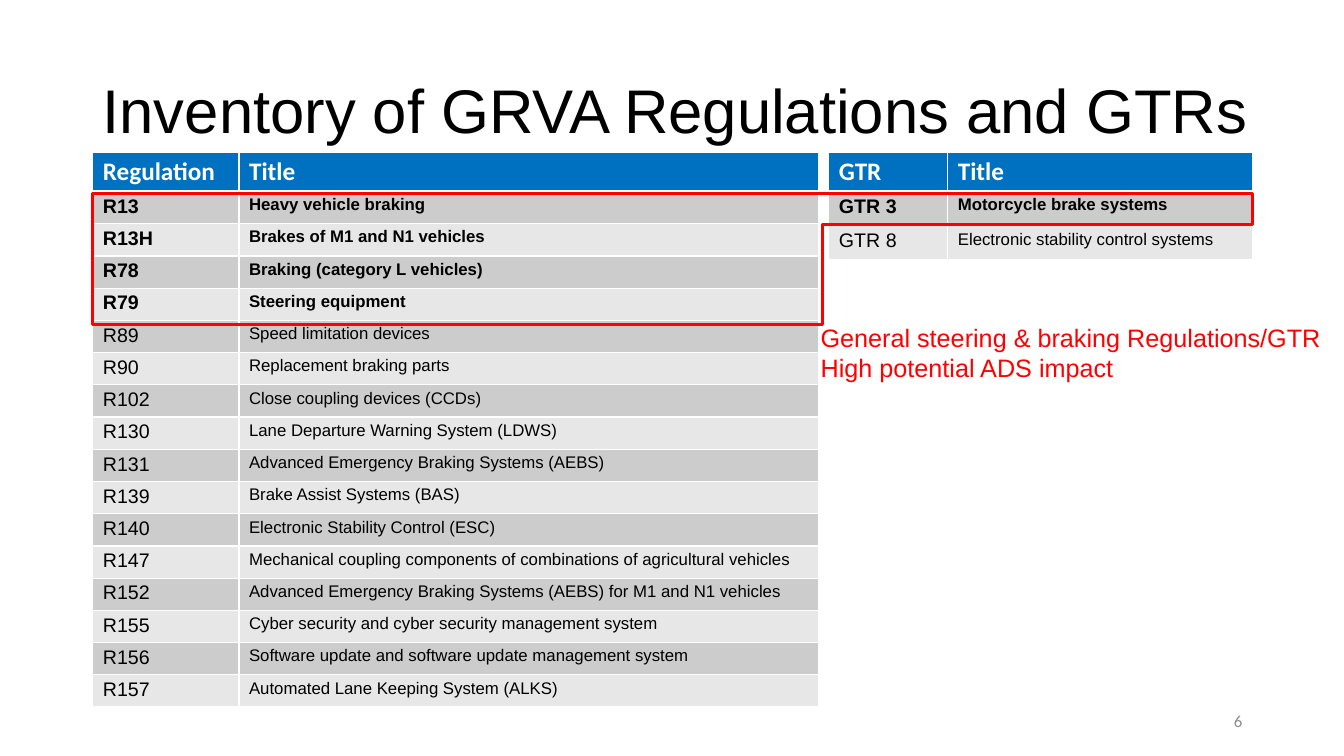
from lxml import etree
from pptx import Presentation, util as u
from pptx.dml.color import RGBColor
from pptx.enum import shapes, text
from pptx.oxml.ns import qn

TITLE = "Inventory of GRVA Regulations and GTRs"
REGULATIONS = [
    ("Regulation", "Title"),
    ("R13", "Heavy vehicle braking"),
    ("R13H", "Brakes of M1 and N1 vehicles"),
    ("R78", "Braking (category L vehicles)"),
    ("R79", "Steering equipment"),
    ("R89", "Speed limitation devices"),
    ("R90", "Replacement braking parts"),
    ("R102", "Close coupling devices (CCDs)"),
    ("R130", "Lane Departure Warning System (LDWS)"),
    ("R131", "Advanced Emergency Braking Systems (AEBS)"),
    ("R139", "Brake Assist Systems (BAS)"),
    ("R140", "Electronic Stability Control (ESC)"),
    ("R147", "Mechanical coupling components of combinations of agricultural vehicles"),
    ("R152", "Advanced Emergency Braking Systems (AEBS) for M1 and N1 vehicles"),
    ("R155", "Cyber security and cyber security management system"),
    ("R156", "Software update and software update management system"),
    ("R157", "Automated Lane Keeping System (ALKS)"),
]
GTRS = [
    ("GTR", "Title"),
    ("GTR 3", "Motorcycle brake systems"),
    ("GTR 8", "Electronic stability control systems"),
]
NOTE = "General steering & braking Regulations/GTR\nHigh potential ADS impact"
PAGE = "6"

COLORS = {"header": "0070C0", "dark": "CCCCCC", "light": "E7E7E7", "white": "FFFFFF",
          "black": "000000", "red": "FF0000", "grey": "8C8C8C"}
WIDTH, HEIGHT = 13.33, 7.5
LEFT, TOP, GTR_LEFT = 0.92, 1.51, 8.22
HEADER_ROW = 0.39
CELL_MARGIN = 0.04


def rgb(name):
    return RGBColor.from_string(COLORS[name])


def style(frame, size, color, font="Arial", bold=False):
    for paragraph in frame.paragraphs:
        for run in paragraph.runs:
            run.font.size = u.Pt(size)
            run.font.name = font
            run.font.bold = bold
            run.font.color.rgb = rgb(color)


def add_label(slide, box, words, size, color, font="Arial", anchor=text.MSO_ANCHOR.MIDDLE):
    frame = slide.shapes.add_textbox(*map(u.Inches, box)).text_frame
    frame.word_wrap = True
    frame.vertical_anchor = anchor
    frame.text = words
    style(frame, size, color, font)
    return frame


def add_borders(cell, bottom):
    """Draw white cell borders; the fill has to follow them in the XML."""
    properties = cell._tc.get_or_add_tcPr()
    for index, (side, points) in enumerate(
            [("a:lnL", 1), ("a:lnR", 1), ("a:lnT", 1), ("a:lnB", bottom)]):
        line = etree.Element(qn(side), w=str(u.Pt(points)))
        fill = etree.SubElement(line, qn("a:solidFill"))
        etree.SubElement(fill, qn("a:srgbClr"), val=COLORS["white"])
        properties.insert(index, line)


def add_inventory(slide, left, columns, row_height, rows, bold_rows):
    heights = [HEADER_ROW] + [row_height] * (len(rows) - 1)
    table = slide.shapes.add_table(
        len(rows), len(columns), u.Inches(left), u.Inches(TOP),
        u.Inches(sum(columns)), u.Inches(sum(heights))).table
    for column, width in zip(table.columns, columns):
        column.width = u.Inches(width)
    for r, (row, height) in enumerate(zip(rows, heights)):
        table.rows[r].height = u.Inches(height)
        for c, words in enumerate(row):
            cell = table.cell(r, c)
            cell.margin_top = cell.margin_bottom = u.Inches(CELL_MARGIN)
            cell.text = words
            cell.fill.solid()
            if r == 0:
                cell.fill.fore_color.rgb = rgb("header")
                style(cell.text_frame, 18, "white", "Calibri", True)
            else:
                cell.fill.fore_color.rgb = rgb("dark" if r % 2 else "light")
                style(cell.text_frame, 12 if c else 14, "black", bold=r <= bold_rows)
            add_borders(cell, 1 if r else 3)


def add_highlight(slide, left, top, width, height, block_width, arm_height):
    """Outline a left block whose top arm reaches right, as a corner turned by 90 degrees."""
    x, y = left + (width - height) / 2, top + (height - width) / 2
    corner = slide.shapes.add_shape(shapes.MSO_SHAPE.CORNER, *map(u.Inches, (x, y, height, width)))
    corner.rotation = 90
    corner.adjustments[0] = block_width / height
    corner.adjustments[1] = arm_height / height
    corner.shadow.inherit = False
    corner.fill.background()
    corner.line.color.rgb = rgb("red")
    corner.line.width = u.Pt(2.25)


def main():
    deck = Presentation()
    deck.slide_width, deck.slide_height = u.Inches(WIDTH), u.Inches(HEIGHT)
    slide = deck.slides.add_slide(deck.slide_layouts[6])

    title = add_label(slide, (LEFT, 0.4, 11.76, 1.45), TITLE, 44, "black")
    title.paragraphs[0].line_spacing = 0.9
    add_inventory(slide, LEFT, (1.45, 5.75), 0.32, REGULATIONS, bold_rows=4)
    add_inventory(slide, GTR_LEFT, (1.18, 3.02), 0.34, GTRS, bold_rows=1)
    add_highlight(slide, LEFT, 1.92, 11.5, 1.3, block_width=7.24, arm_height=0.31)
    add_label(slide, (8.04, 3.15, 5.42, 0.71), NOTE, 18, "red", anchor=text.MSO_ANCHOR.TOP)
    page = add_label(slide, (9.42, 6.95, 3, 0.4), PAGE, 12, "grey", "Calibri")
    page.paragraphs[0].alignment = text.PP_ALIGN.RIGHT
    deck.save("out.pptx")


if __name__ == "__main__":
    main()
